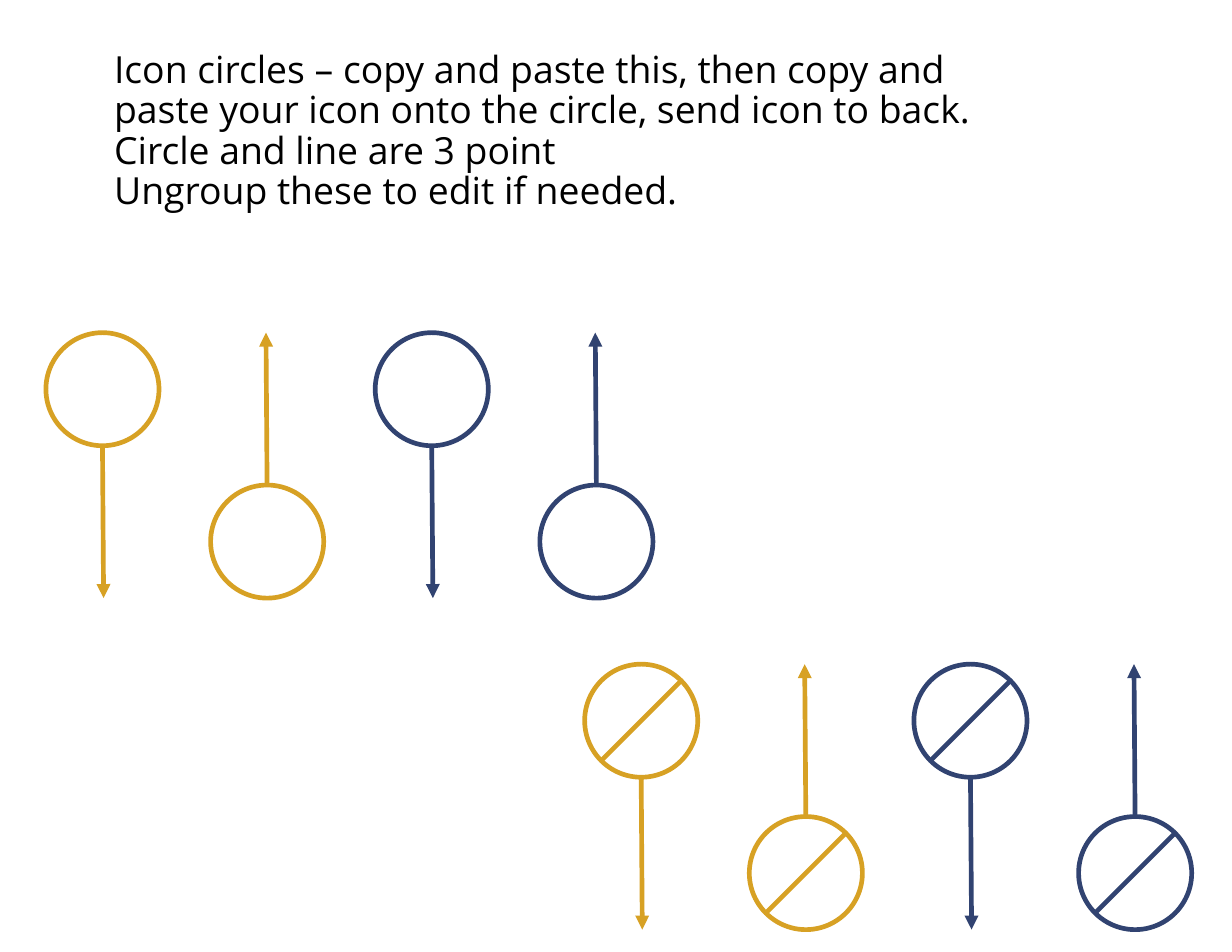
"""Build a slide of reusable icon circles with arrows, plain and slashed."""
from pptx import Presentation
from pptx import util as u
from pptx.dml.color import RGBColor
from pptx.enum import shapes, text
from pptx.oxml.ns import qn
from lxml import etree

GOLD = RGBColor(0xD7, 0xA1, 0x24)
NAVY = RGBColor(0x31, 0x43, 0x71)
BLACK = RGBColor(0, 0, 0)
WIDTH, HEIGHT = 11, 8.5
COLUMN = 1.47
CIRCLE = 1.01
MARKER = 2.37
LEAN = 0.01
SLASH = (0.15, 0.86)
MARKERS = [(GOLD, False), (GOLD, True), (NAVY, False), (NAVY, True)]
ROWS = [
    {"left": 0.41, "top": 2.97, "slashed": False},
    {"left": 5.22, "top": 5.93, "slashed": True},
]
INSTRUCTIONS = [
    "Icon circles – copy and paste this, then copy and paste your icon "
    "onto the circle, send icon to back.",
    "Circle and line are 3 point",
    "Ungroup these to edit if needed.",
]


def apply_format(target, values):
    """Set each named attribute on the target."""
    for name, value in values.items():
        setattr(target, name, value)


def add_instructions(page):
    """Add the instruction text at the top of the page."""
    box = page.shapes.add_textbox(*map(u.Inches, (0.92, 0.4, 8.55, 1.45)))
    apply_format(box.text_frame, {
        "word_wrap": True,
        "vertical_anchor": text.MSO_ANCHOR.TOP,
    })
    para = box.text_frame.paragraphs[0]
    para.text = "\v".join(INSTRUCTIONS)
    para.line_spacing = u.Pt(26)
    for span in para.runs:
        apply_format(span.font, {"name": "Open Sans", "size": u.Pt(24)})
        span.font.color.rgb = BLACK


def style_line(line, color):
    """Give a line its colour and the shared three point width."""
    line.color.rgb = color
    line.width = u.Pt(3)


def add_line(group, start, end, color, arrow=False):
    """Add a straight line, with an arrowhead at its end if asked."""
    line = group.shapes.add_connector(
        shapes.MSO_CONNECTOR.STRAIGHT, *map(u.Inches, (*start, *end)))
    style_line(line.line, color)
    properties = line._element.spPr
    if arrow:
        head = etree.SubElement(properties.find(qn("a:ln")), qn("a:tailEnd"))
        head.set("type", "triangle")
    etree.SubElement(properties, qn("a:effectLst"))


def add_circle(group, left, top, color, rotation):
    """Add an unfilled circle."""
    circle = group.shapes.add_shape(
        shapes.MSO_SHAPE.OVAL, *map(u.Inches, (left, top, CIRCLE, CIRCLE)))
    circle.shadow.inherit = False
    circle.fill.background()
    circle.rotation = rotation
    style_line(circle.line, color)


def add_marker(page, left, top, color, upward, slashed):
    """Add a grouped circle with its arrow and optional slash."""
    group = page.shapes.add_group_shape()
    middle = left + CIRCLE / 2
    reach = MARKER - CIRCLE
    if upward:
        circle_top, start, end = top + reach, top + reach, top
        tip = middle - LEAN
    else:
        circle_top, start, end = top, top + CIRCLE, top + MARKER
        tip = middle + LEAN
    add_line(group, (middle, start), (tip, end), color, arrow=True)
    add_circle(group, left, circle_top, color, 180 if upward else 0)
    if slashed:
        near, far = SLASH
        add_line(group, (left + far, circle_top + near),
                 (left + near, circle_top + far), color)


def main():
    """Build and save the slide."""
    deck = Presentation()
    apply_format(deck, {
        "slide_width": u.Inches(WIDTH),
        "slide_height": u.Inches(HEIGHT),
    })
    page = deck.slides.add_slide(deck.slide_layouts[6])
    add_instructions(page)
    for row in ROWS:
        for column, (color, upward) in enumerate(MARKERS):
            add_marker(page, row["left"] + column * COLUMN, row["top"],
                       color, upward, row["slashed"])
    deck.save("out.pptx")


if __name__ == "__main__":
    main()
